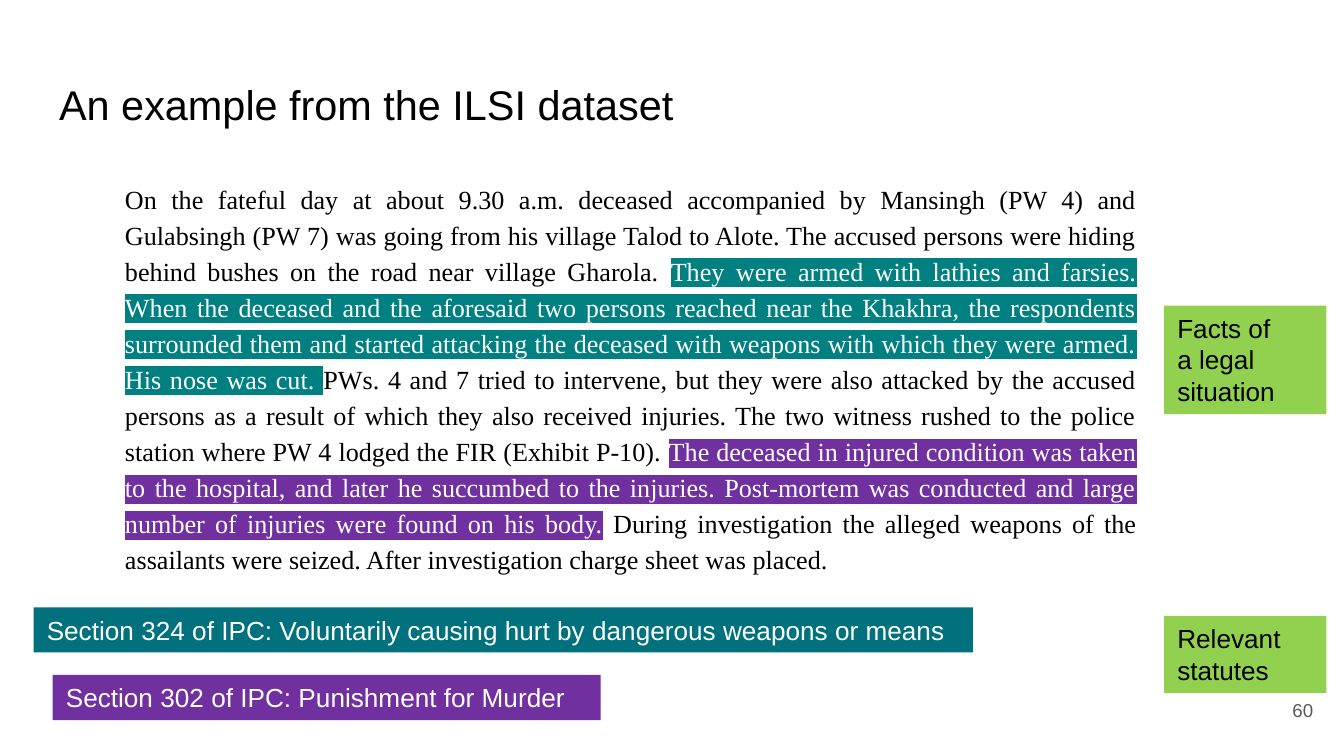
from lxml.etree import SubElement
from pptx import Presentation
from pptx.dml.color import RGBColor
from pptx.enum.shapes import MSO_SHAPE as Shape
from pptx.enum.text import MSO_ANCHOR as Anchor, MSO_AUTO_SIZE as AutoSize, PP_ALIGN as Align
from pptx.oxml.ns import qn
from pptx.util import Pt

COLOURS = {
    "black": "000000",
    "white": "FFFFFF",
    "grey": "595959",
    "teal": "00717D",
    "teal mark": "008080",
    "purple": "7030A0",
    "green": "92D050",
}

TITLE = "An example from the ILSI dataset"
PAGE_NUMBER = "60"

CASE = [
    ("On the fateful day at about 9.30 a.m. deceased accompanied by Mansingh (PW 4) "
     "and Gulabsingh (PW 7) was going from his village Talod to Alote. The accused "
     "persons were hiding behind bushes on the road near village Gharola. ", None),
    ("They were armed with lathies and farsies. When the deceased and the aforesaid "
     "two persons reached near the Khakhra, the respondents surrounded them and "
     "started attacking the deceased with weapons with which they were armed. "
     "His nose was cut. ", "teal mark"),
    ("PWs. 4 and 7 tried to intervene, but they were also attacked by the accused "
     "persons as a result of which they also received injuries. The two witness "
     "rushed to the police station where PW 4 lodged the FIR (Exhibit P-10). ", None),
    ("The deceased in injured condition was taken to the hospital, and later he "
     "succumbed to the injuries. Post-mortem was conducted and large number of "
     "injuries were found on his body.", "purple"),
    (" During investigation the alleged weapons of the assailants were seized. "
     "After investigation charge sheet was placed.", None),
]

LABELS = [
    (["Section 324 of IPC: Voluntarily causing hurt by dangerous weapons or means"],
     (18, 325.4, 503.2, 24.2), "teal", "white"),
    (["Section 302 of IPC: Punishment for Murder"],
     (28.2, 361.6, 293.6, 24.2), "purple", "white"),
    (["Facts of", "a legal situation"], (623.6, 163.7, 87, 58.2), "green", "black"),
    (["Relevant statutes"], (623.6, 330, 87, 41.2), "green", "black"),
]


def colour(name):
    return RGBColor.from_string(COLOURS[name])


def place(box, left, top, width, height):
    box.left, box.top, box.width, box.height = map(Pt, (left, top, width, height))


def set_frame(box, vertical_inset=7.2, anchor=Anchor.TOP):
    frame = box.text_frame
    frame.word_wrap = True
    frame.auto_size = AutoSize.NONE
    frame.vertical_anchor = anchor
    frame.margin_left = frame.margin_right = Pt(7.2)
    frame.margin_top = frame.margin_bottom = Pt(vertical_inset)
    return frame


def style(para, size, ink, name="Arial", align=Align.LEFT):
    para.alignment = align
    para.space_before = Pt(0)
    para.font.size = Pt(size)
    para.font.name = name
    if ink:
        para.font.color.rgb = colour(ink)


def add_title(page):
    box = page.shapes.title
    place(box, 24.5, 35.3, 671, 45.4)
    frame = set_frame(box)
    frame.text = TITLE
    style(frame.paragraphs[0], 22.2, "black")


def add_case(page):
    box = page.placeholders[1]
    place(box, 51.1, 88.6, 565.2, 246.2)
    para = set_frame(box).paragraphs[0]
    properties = para._p.get_or_add_pPr()
    properties.set("marL", str(Pt(8.64)))
    properties.set("indent", "0")
    SubElement(properties, qn("a:buNone"))
    style(para, 14, None, "Times New Roman", Align.JUSTIFY)
    para.line_spacing = 1.15
    for text, mark in CASE:
        span = para.add_run()
        span.text = text
        span.font.color.rgb = colour("white" if mark else "black")
        if mark:
            highlight = SubElement(span.font._element, qn("a:highlight"))
            SubElement(highlight, qn("a:srgbClr"), val=COLOURS[mark])


def add_label(page, lines, area, fill, ink):
    box = page.shapes.add_shape(Shape.RECTANGLE, *map(Pt, area))
    box.shadow.inherit = False
    box.fill.solid()
    box.fill.fore_color.rgb = colour(fill)
    box.line.fill.background()
    frame = set_frame(box, 3.6)
    frame.text = "\n".join(lines)
    for para in frame.paragraphs:
        style(para, 14, ink)


def add_page_number(page):
    box = page.shapes.add_textbox(*map(Pt, (667.4, 367.2, 43.2, 26.6)))
    frame = set_frame(box, anchor=Anchor.MIDDLE)
    frame.text = PAGE_NUMBER
    style(frame.paragraphs[0], 10, "grey", align=Align.RIGHT)


def main():
    deck = Presentation()
    deck.slide_width, deck.slide_height = Pt(720), Pt(405)
    page = deck.slides.add_slide(deck.slide_layouts[1])
    add_title(page)
    add_page_number(page)
    add_case(page)
    for label in LABELS:
        add_label(page, *label)
    deck.save("out.pptx")


if __name__ == "__main__":
    main()
